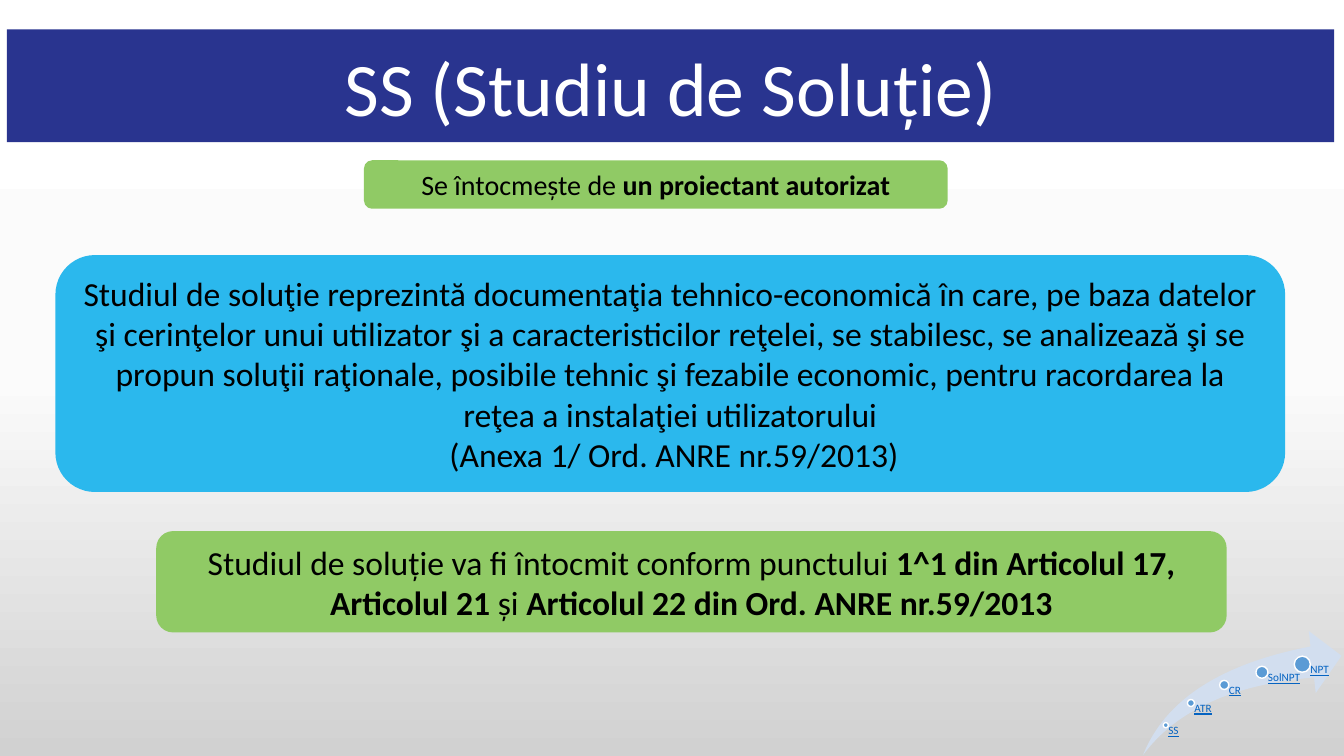
"""Build the slide on the solution study for a grid connection."""
import copy
from dataclasses import dataclass

import pptx
import pptx.dml.color
import pptx.enum.shapes
import pptx.enum.text
import pptx.oxml
import pptx.oxml.ns
import pptx.util

Pt = pptx.util.Pt
SHAPE = pptx.enum.shapes.MSO_SHAPE
ANCHOR = pptx.enum.text.MSO_ANCHOR
ALIGN = pptx.enum.text.PP_ALIGN


@dataclass(frozen=True)
class Theme:
    """Colours and type sizes of the slide."""
    font: str = "Calibri"
    navy: str = "29348F"
    green: str = "90CA65"
    sky: str = "2BB8ED"
    swoosh: str = "D2DEEF"
    dot: str = "5B9BD5"
    link: str = "0563C1"
    white: str = "FFFFFF"
    black: str = "000000"
    backdrop: tuple = ((0, "FFFFFF"), (0.5, "FBFBFB"), (1, "D1D1D1"))
    title: int = 54
    body: int = 24
    note: int = 20
    label: int = 8


THEME = Theme()

STEPS = (
    ("SS", 830.9, 516.2, 3.6, 18.7),
    ("ATR", 848.2, 499.7, 5, 23.8),
    ("CR", 871.2, 486, 6.5, 27.4),
    ("SolNPT", 897.1, 475.9, 8.6, 28.1),
    ("NPT", 924.5, 468.7, 11.5, 28.1),
)
STEPS_BOTTOM = 539.3


def rgb(colour):
    """Turn a hex string into a colour."""
    return pptx.dml.color.RGBColor.from_string(colour)


def fill(sp, colour):
    """Give a shape a solid fill."""
    sp.fill.solid()
    sp.fill.fore_color.rgb = rgb(colour)


def style(font, size, colour):
    """Set typeface, size and colour."""
    font.name = THEME.font
    font.size = Pt(size)
    font.color.rgb = rgb(colour)


def set_background(s):
    """Paint the vertical gradient behind the slide."""
    bg = s.background.fill
    bg.gradient()
    bg.gradient_angle = 270
    stops = s.background._cSld.find(".//" + pptx.oxml.ns.qn("a:gsLst"))
    stops.insert(1, copy.deepcopy(stops[0]))
    for stop, (position, colour) in zip(bg.gradient_stops, THEME.backdrop):
        stop.position = position
        stop.color.rgb = rgb(colour)


def add_shape(s, kind, box, colour):
    """Add a flat preset shape."""
    sp = s.shapes.add_shape(kind, *map(Pt, box))
    sp.shadow.inherit = False
    fill(sp, colour)
    sp.line.fill.background()
    return sp


def add_title(s, text, box):
    """Turn the title placeholder into a rounded banner."""
    sp = s.shapes.title
    sp.left, sp.top, sp.width, sp.height = map(Pt, box)
    ns = pptx.oxml.ns.nsdecls("a")
    sp._element.spPr.insert(1, pptx.oxml.parse_xml(
        f'<a:prstGeom {ns} prst="roundRect"><a:avLst/></a:prstGeom>'))
    fill(sp, THEME.navy)
    tf = sp.text_frame
    tf.text = text
    tf.auto_size = pptx.enum.text.MSO_AUTO_SIZE.NONE
    tf.vertical_anchor = ANCHOR.MIDDLE
    p = tf.paragraphs[0]
    p.alignment = ALIGN.CENTER
    style(p.runs[0].font, THEME.title, THEME.white)


def add_panel(s, box, colour, size, paragraphs):
    """Add a rounded panel whose paragraphs are lists of (text, bold)."""
    tf = add_shape(s, SHAPE.ROUNDED_RECTANGLE, box, colour).text_frame
    tf.word_wrap = True
    tf.vertical_anchor = ANCHOR.MIDDLE
    for i, parts in enumerate(paragraphs):
        p = tf.add_paragraph() if i else tf.paragraphs[0]
        p.alignment = ALIGN.CENTER
        for text, bold in parts:
            r = p.add_run()
            r.text = text
            r.font.bold = bold
            style(r.font, size, THEME.black)


def add_step(s, text, left, top, size, width):
    """Add a dot on the arrow and the label that starts at its centre."""
    dot = add_shape(s, SHAPE.OVAL, (left, top, size, size), THEME.dot)
    dot.line.color.rgb = rgb(THEME.white)
    dot.line.width = Pt(1)
    radius = size / 2
    y = top + radius
    tb = s.shapes.add_textbox(Pt(left + radius), Pt(y), Pt(width), Pt(STEPS_BOTTOM - y))
    tf = tb.text_frame
    tf.text = text
    tf.margin_left = Pt(radius)
    tf.margin_top = tf.margin_right = tf.margin_bottom = 0
    p = tf.paragraphs[0]
    p.line_spacing = 0.9
    font = p.runs[0].font
    style(font, THEME.label, THEME.link)
    font.underline = True


def main():
    """Build and save the slide."""
    prs = pptx.Presentation()
    prs.slide_width, prs.slide_height = Pt(960), Pt(540)
    s = prs.slides.add_slide(prs.slide_layouts[5])
    set_background(s)
    add_title(s, "SS (Studiu de Soluție)", (5, 21, 948, 80.6))

    swoosh = add_shape(s, SHAPE.SWOOSH_ARROW, (816.5, 450.7, 141.8, 88.6), THEME.swoosh)
    swoosh.adjustments[0] = swoosh.adjustments[1] = 0.25
    for step in STEPS:
        add_step(s, *step)

    add_panel(s, (260, 114.5, 416.9, 34.6), THEME.green, THEME.note, [
        [("Se întocmește de ", False), ("un proiectant autorizat", True)],
    ])
    add_panel(s, (39.6, 182.2, 878.4, 169.2), THEME.sky, THEME.body, [
        [("Studiul de soluţie reprezintă documentaţia tehnico-economică în care, "
          "pe baza datelor şi cerinţelor unui utilizator şi a caracteristicilor "
          "reţelei, se stabilesc, se analizează şi se propun soluţii raţionale, "
          "posibile tehnic şi fezabile economic, pentru racordarea la reţea a "
          "instalaţiei utilizatorului", False)],
        [(" (Anexa 1/ Ord. ANRE nr.59/2013)", False)],
    ])
    add_panel(s, (111.6, 379.4, 764.6, 72.4), THEME.green, THEME.body, [
        [("Studiul de soluție va fi întocmit conform punctului ", False),
         ("1^1 din Articolul 17, Articolul 21 ", True),
         ("și ", False),
         ("Articolul 22 din Ord. ANRE nr.59/2013", True)],
    ])
    prs.save("out.pptx")


if __name__ == "__main__":
    main()
